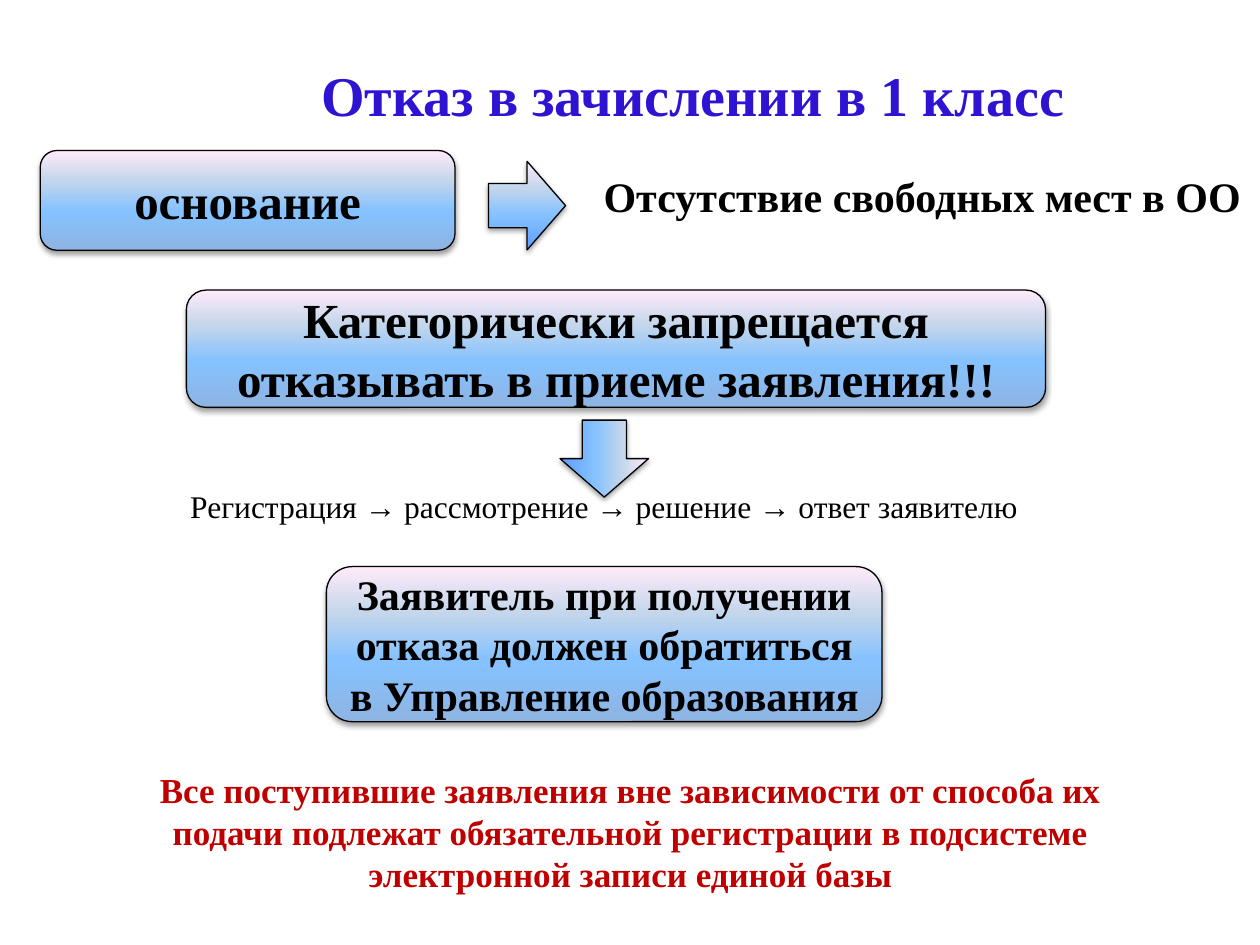
"""Build a slide on refusing enrolment in the first class."""
import lxml.etree
import pptx
import pptx.dml.color
import pptx.enum.shapes
import pptx.enum.text
import pptx.oxml
import pptx.oxml.ns
import pptx.util

Pt = pptx.util.Pt
SHAPE = pptx.enum.shapes.MSO_SHAPE
ALIGN = pptx.enum.text.PP_ALIGN
ANCHOR = pptx.enum.text.MSO_ANCHOR
COLORS = {
    "title": "2E13D3", "text": "000000", "warning": "C00000",
    "box": "8EB4E3", "arrow": "5E9EFF",
    "sky": "85C2FF", "mist": "C4D6EB", "rose": "FFEBFA",
}
SHADOW = (
    '<a:outerShdw %s blurRad="40000" dist="20000" dir="5400000" rotWithShape="0">'
    '<a:srgbClr val="%s"><a:alpha val="38000"/></a:srgbClr></a:outerShdw>'
)


def write(frame, text, size, color="text", bold=True, align=ALIGN.CENTER):
    frame.text = text
    for paragraph in frame.paragraphs:
        paragraph.alignment = align
        for run in paragraph.runs:
            run.font.name = "Times New Roman"
            run.font.size = Pt(size)
            run.font.bold = bold
            run.font.color.rgb = pptx.dml.color.RGBColor.from_string(COLORS[color])


def add_glossy(kind, bounds, base):
    shape = slide.shapes.add_shape(kind, *map(Pt, bounds))
    shape.fill.gradient()
    shape.fill.gradient_angle = 90
    stops = shape._element.spPr.find(".//" + pptx.oxml.ns.qn("a:gsLst"))
    for stop in list(stops):
        stops.remove(stop)
    for position, color in ((0, base), (40, "sky"), (70, "mist"), (100, "rose")):
        stop = lxml.etree.SubElement(stops, pptx.oxml.ns.qn("a:gs"), pos=str(position * 1000))
        lxml.etree.SubElement(stop, pptx.oxml.ns.qn("a:srgbClr"), val=COLORS[color])
    shape.line.color.rgb = pptx.dml.color.RGBColor.from_string(COLORS["text"])
    shape.line.width = Pt(0.75)
    shape.shadow.inherit = False
    effects = shape._element.spPr.find(pptx.oxml.ns.qn("a:effectLst"))
    effects.append(pptx.oxml.parse_xml(SHADOW % (pptx.oxml.ns.nsdecls("a"), COLORS["text"])))
    return shape


deck = pptx.Presentation()
deck.slide_width, deck.slide_height = Pt(720), Pt(540)
slide = deck.slides.add_slide(deck.slide_layouts[5])

title = slide.shapes.title
title.left, title.top, title.width, title.height = map(Pt, (72, 21, 648, 65))
title.text_frame.vertical_anchor = ANCHOR.MIDDLE
write(title.text_frame, "Отказ в зачислении в 1 класс", 32, "title")

for statement, bounds, size in (
    ("основание", (23, 86, 237, 57), 28),
    ("Категорически запрещается отказывать в приеме заявления!!!", (106.5, 165.8, 491, 67), 28),
    ("Заявитель при получении отказа должен обратиться в Управление образования",
     (186.5, 323.8, 317.5, 88.6), 24),
):
    box = add_glossy(SHAPE.ROUNDED_RECTANGLE, bounds, "box")
    box.text_frame.word_wrap = True
    box.text_frame.vertical_anchor = ANCHOR.MIDDLE
    write(box.text_frame, statement, size)

for left, top, turn in ((279.2, 92.2, 0), (323.3, 236.8, 90)):
    arrow = add_glossy(SHAPE.RIGHT_ARROW, (left, top, 44, 50.6), "arrow")
    arrow.rotation = turn

for note, bounds, size, color, bold, align, wrap in (
    ("Отсутствие свободных мест в ОО", (337.8, 93.6, 382.2, 36.3),
     24, "text", True, ALIGN.LEFT, False),
    ("Регистрация → рассмотрение → решение → ответ заявителю", (86.4, 275, 517.7, 29),
     18, "text", False, ALIGN.CENTER, True),
    ("Все поступившие заявления вне зависимости от способа их подачи подлежат "
     "обязательной регистрации в подсистеме\nэлектронной записи единой базы",
     (56.7, 435.6, 607, 80), 20, "warning", True, ALIGN.CENTER, True),
):
    caption = slide.shapes.add_textbox(*map(Pt, bounds))
    caption.text_frame.word_wrap = wrap
    caption.text_frame.auto_size = pptx.enum.text.MSO_AUTO_SIZE.SHAPE_TO_FIT_TEXT
    write(caption.text_frame, note, size, color, bold, align)

deck.save("out.pptx")
